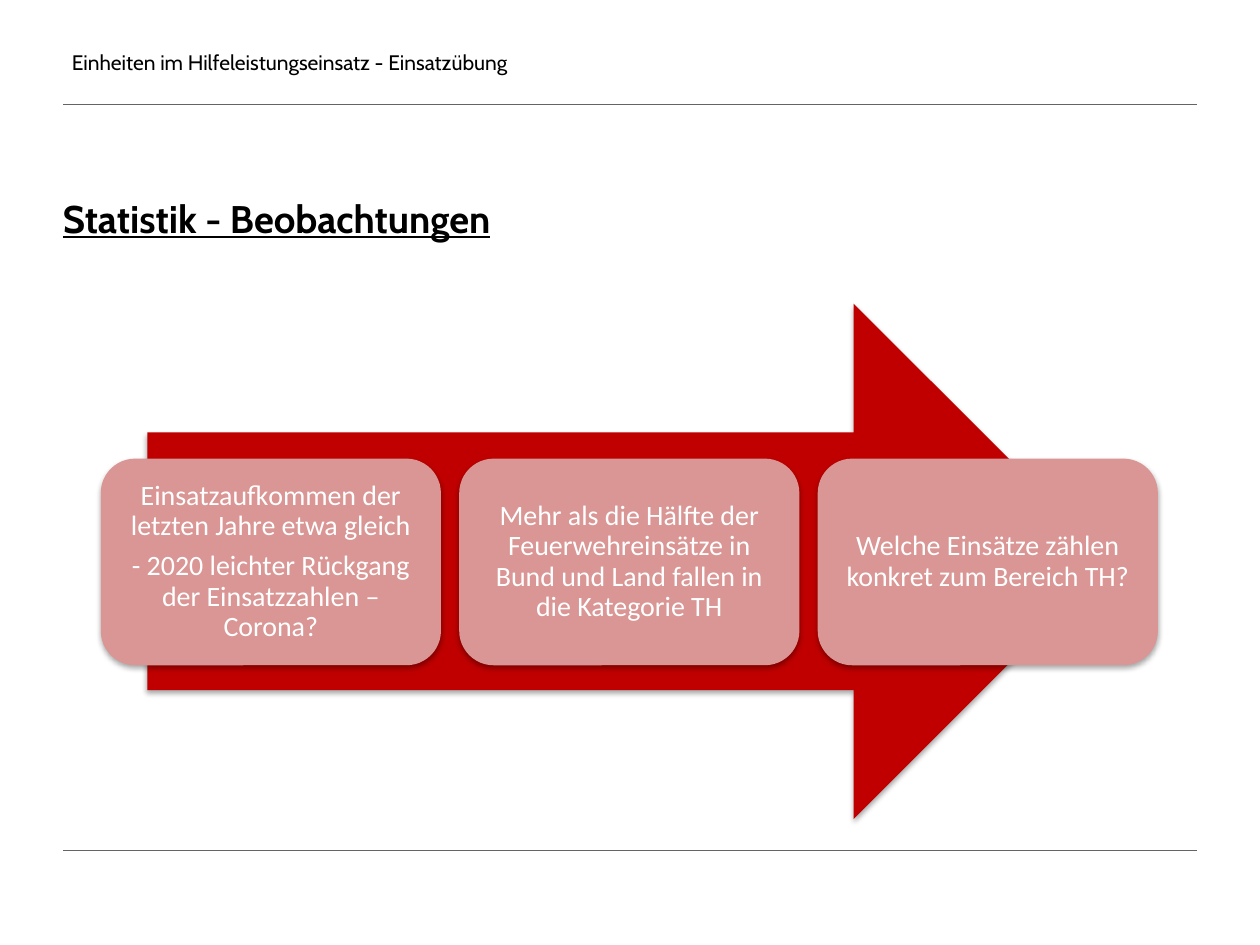
from lxml import etree
from pptx import Presentation, util as u
from pptx.dml.color import RGBColor
from pptx.enum import shapes, text
from pptx.oxml import parse_xml
from pptx.oxml.ns import nsdecls, qn

BLACK = RGBColor(0x00, 0x00, 0x00)
WHITE = RGBColor(0xFF, 0xFF, 0xFF)
GREY = RGBColor(0x64, 0x64, 0x64)
RED = RGBColor(0xC0, 0x00, 0x00)
ROSE = RGBColor(0xD9, 0x96, 0x94)

COLUMNS, ROWS = 20, 15
SHADOW = (
    f'<a:effectLst {nsdecls("a")}><a:outerShdw blurRad="40000" dist="23000" '
    'dir="5400000" rotWithShape="0"><a:srgbClr val="000000">'
    '<a:alpha val="35000"/></a:srgbClr></a:outerShdw></a:effectLst>'
)


def write_text(frame, paragraphs, *, font="Cabin", size=12, color=BLACK,
               bold=False, underline=False, align=text.PP_ALIGN.LEFT,
               anchor=text.MSO_ANCHOR.MIDDLE, spacing=None, gap=0,
               insets=(0, 0, 0, 0)):
    frame.word_wrap = True
    frame.vertical_anchor = anchor
    (frame.margin_left, frame.margin_top,
     frame.margin_right, frame.margin_bottom) = map(u.Inches, insets)
    for index, content in enumerate(paragraphs):
        paragraph = frame.paragraphs[0] if index == 0 else frame.add_paragraph()
        paragraph.alignment = align
        paragraph.line_spacing = spacing
        if index < len(paragraphs) - 1:
            paragraph.space_after = u.Pt(gap)
        run = paragraph.add_run()
        run.text = content
        run.font.name = font
        run.font.size = u.Pt(size)
        run.font.color.rgb = color
        run.font.bold = bold
        run.font.underline = underline


class SlideBuilder:
    """Places elements on a grid of COLUMNS by ROWS."""

    def __init__(self, presentation):
        self.cell_width = presentation.slide_width / COLUMNS
        self.cell_height = presentation.slide_height / ROWS
        self.slide = presentation.slides.add_slide(presentation.slide_layouts[6])

    def place(self, column, row, *extent):
        lengths = [column * self.cell_width, row * self.cell_height]
        if extent:
            lengths += [extent[0] * self.cell_width, extent[1] * self.cell_height]
        return [round(length) for length in lengths]

    def rule(self, row):
        connector = self.slide.shapes.add_connector(
            shapes.MSO_CONNECTOR.STRAIGHT,
            *self.place(1, row), *self.place(COLUMNS - 1, row))
        connector.line.color.rgb = GREY
        connector.line.width = u.Pt(0.25)
        etree.SubElement(connector._element.spPr, qn("a:effectLst"))

    def label(self, area, content, **style):
        box = self.slide.shapes.add_textbox(*self.place(*area))
        write_text(box.text_frame, [content], **style)

    def block(self, kind, area, color):
        shape = self.slide.shapes.add_shape(kind, *self.place(*area))
        shape.fill.solid()
        shape.fill.fore_color.rgb = color
        shape.line.fill.background()
        shape._element.spPr.append(parse_xml(SHADOW))
        return shape

    def card(self, area, paragraphs):
        shape = self.block(shapes.MSO_SHAPE.ROUNDED_RECTANGLE, area, ROSE)
        write_text(shape.text_frame, paragraphs, font="Calibri", size=16,
                   color=WHITE, align=text.PP_ALIGN.CENTER, spacing=0.9,
                   gap=5.6, insets=(0.07,) * 4)


def main():
    presentation = Presentation()
    presentation.slide_width = u.Inches(10)
    presentation.slide_height = u.Inches(7.5)
    builder = SlideBuilder(presentation)

    # Header and footer
    builder.rule(1.66)
    builder.label((1, 0.66, 12.16, 0.66),
                  "Einheiten im Hilfeleistungseinsatz - Einsatzübung",
                  insets=(0.07, 0, 0, 0))
    builder.rule(13.5)

    # Arrow with the three observations
    builder.block(shapes.MSO_SHAPE.RIGHT_ARROW, (2.34, 4.82, 15.3, 8.18), RED)
    observations = [
        ["Einsatzaufkommen der letzten Jahre etwa gleich",
         "- 2020 leichter Rückgang der Einsatzzahlen – Corona?"],
        ["Mehr als die Hälfte der Feuerwehreinsätze in Bund und Land "
         "fallen in die Kategorie TH"],
        ["Welche Einsätze zählen konkret zum Bereich TH?"],
    ]
    card_width, card_step = 5.4, 5.69
    for index, paragraphs in enumerate(observations):
        builder.card((1.6 + index * card_step, 7.28, card_width, 3.28), paragraphs)

    # Title
    builder.label((1, 3.16, 14.34, 1.34), "Statistik - Beobachtungen",
                  size=22, bold=True, underline=True,
                  anchor=text.MSO_ANCHOR.TOP, spacing=u.Pt(24))

    presentation.save("out.pptx")


if __name__ == "__main__":
    main()
